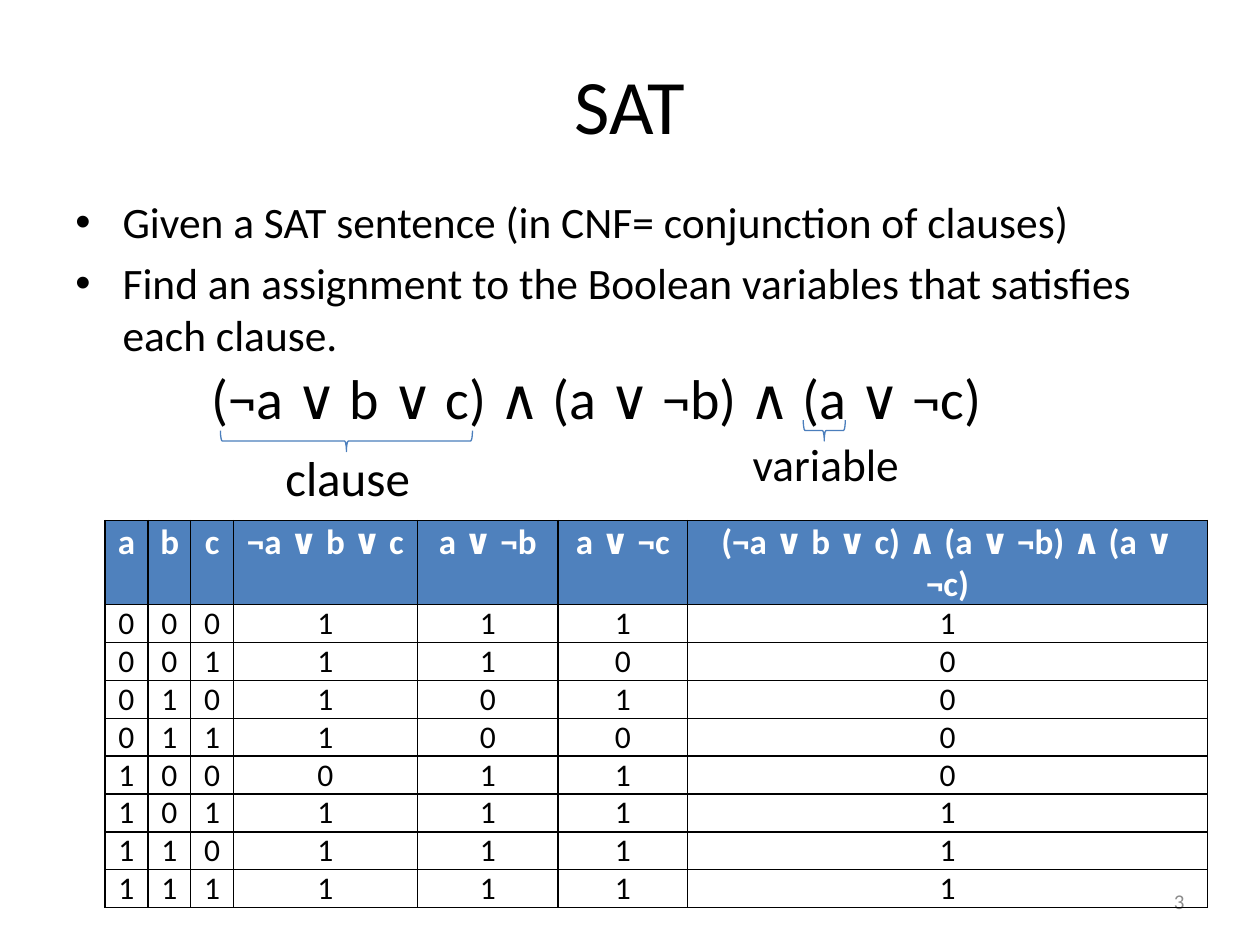
import dataclasses
import itertools

import pptx
import pptx.dml.color
import pptx.enum.shapes
import pptx.enum.text
import pptx.oxml.ns
import pptx.util
from lxml import etree

Pt = pptx.util.Pt
PP_ALIGN = pptx.enum.text.PP_ALIGN
MSO_ANCHOR = pptx.enum.text.MSO_ANCHOR
qn = pptx.oxml.ns.qn


@dataclasses.dataclass(frozen=True)
class Theme:
    font: str = "Calibri"
    ink: str = "000000"
    header_text: str = "FFFFFF"
    header_fill: str = "4F81BD"
    brace: str = "4B7EBC"
    muted: str = "8C8C8C"
    title: float = 44
    body: float = 24.8
    formula: float = 32
    clause: float = 28
    variable: float = 25.9
    header: float = 20
    cell: float = 18
    number: float = 12
    indent: float = 27


T = Theme()
CLAUSES = ["¬a ∨ b ∨ c", "a ∨ ¬b", "a ∨ ¬c"]
FORMULA = " ∧ ".join(f"({clause})" for clause in CLAUSES)


def rgb(value):
    return pptx.dml.color.RGBColor.from_string(value)


def style(p, size, color=T.ink, bold=False, align=PP_ALIGN.LEFT):
    p.alignment = align
    for r in p.runs:
        r.font.name = T.font
        r.font.size = Pt(size)
        r.font.bold = bold
        r.font.color.rgb = rgb(color)


def hang(p, size, bullet=None):
    """Hanging indent with a gap above of a fifth of the type size."""
    p.space_before = Pt(round(size * 0.2, 1))
    pPr = p._p.get_or_add_pPr()
    pPr.set("marL", str(Pt(T.indent)))
    pPr.set("indent", str(-Pt(T.indent)))
    if bullet:
        etree.SubElement(pPr, qn("a:buFont"), typeface="Arial")
        etree.SubElement(pPr, qn("a:buChar"), char=bullet)


def add_text(shapes, box, text, size, color=T.ink, align=PP_ALIGN.LEFT,
             anchor=MSO_ANCHOR.TOP):
    tf = shapes.add_textbox(*map(Pt, box)).text_frame
    tf.word_wrap = True
    tf.vertical_anchor = anchor
    tf.text = text
    for p in tf.paragraphs:
        style(p, size, color, align=align)
    return tf


def add_hanging_text(shapes, box, text, size, bullet=None):
    for p in add_text(shapes, box, text, size).paragraphs:
        hang(p, size, bullet)


def add_brace_label(s, box, label, label_dx, size):
    """Brace opening upward that fills the box, with its label below."""
    x, y, w, h = box
    shapes = s.shapes.add_group_shape().shapes
    sp = shapes.add_shape(
        pptx.enum.shapes.MSO_SHAPE.LEFT_BRACE,
        Pt(x + (w - h) / 2), Pt(y + (h - w) / 2), Pt(h), Pt(w))
    sp.rotation = 270
    sp.shadow.inherit = False
    sp.fill.background()
    sp.line.color.rgb = rgb(T.brace)
    sp.line.width = Pt(0.75)
    add_hanging_text(shapes, (x + label_dx, y + h / 2, 102, 42), label, size)


def add_borders(cell):
    tcPr = cell._tc.get_or_add_tcPr()
    for i, side in enumerate(("lnL", "lnR", "lnT", "lnB")):
        ln = etree.Element(qn(f"a:{side}"), w=str(Pt(1)))
        fill = etree.SubElement(ln, qn("a:solidFill"))
        etree.SubElement(fill, qn("a:srgbClr"), val=T.ink)
        tcPr.insert(i, ln)


def truth_rows():
    for a, b, c in itertools.product((0, 1), repeat=3):
        clauses = [int(not a or b or c), int(a or not b), int(a or not c)]
        yield [a, b, c, *clauses, int(all(clauses))]


def add_truth_table(s, box):
    rows = [["a", "b", "c", *CLAUSES, FORMULA], *truth_rows()]
    widths = [24.5, 24.5, 24.5, 105, 80.5, 74, 297]
    table = s.shapes.add_table(len(rows), len(widths), *map(Pt, box)).table
    for column, width in zip(table.columns, widths):
        column.width = Pt(width)
    for i, values in enumerate(rows):
        is_header = i == 0
        table.rows[i].height = Pt(18 if is_header else 16.5)
        for cell, value in zip(table.rows[i].cells, values):
            cell.text = str(value)
            cell.margin_top = cell.margin_bottom = 0
            if is_header:
                cell.fill.solid()
                cell.fill.fore_color.rgb = rgb(T.header_fill)
            else:
                cell.fill.background()
            style(cell.text_frame.paragraphs[0],
                  T.header if is_header else T.cell,
                  T.header_text if is_header else T.ink,
                  is_header, PP_ALIGN.CENTER)
            add_borders(cell)


def main():
    prs = pptx.Presentation()
    prs.slide_width, prs.slide_height = Pt(720), Pt(540)
    s = prs.slides.add_slide(prs.slide_layouts[6])
    add_text(s.shapes, (36, 24, 648, 70), "SAT", T.title,
             align=PP_ALIGN.CENTER, anchor=MSO_ANCHOR.MIDDLE)
    add_hanging_text(
        s.shapes, (36, 108, 648, 90),
        "Given a SAT sentence (in CNF= conjunction of clauses)\n"
        "Find an assignment to the Boolean variables that satisfies each clause.",
        T.body, "•")
    add_text(s.shapes, (516, 500.5, 168, 28.75), "3", T.number, T.muted,
             PP_ALIGN.RIGHT, MSO_ANCHOR.MIDDLE)
    add_hanging_text(s.shapes, (114, 204, 480, 60), FORMULA, T.formula)
    add_brace_label(s, (126, 246, 144, 12), "clause", 30, T.clause)
    add_brace_label(s, (459, 240, 24, 12), "variable", -36, T.variable)
    add_truth_table(s, (60, 297.5, 630, 196.5))
    prs.save("out.pptx")


if __name__ == "__main__":
    main()
